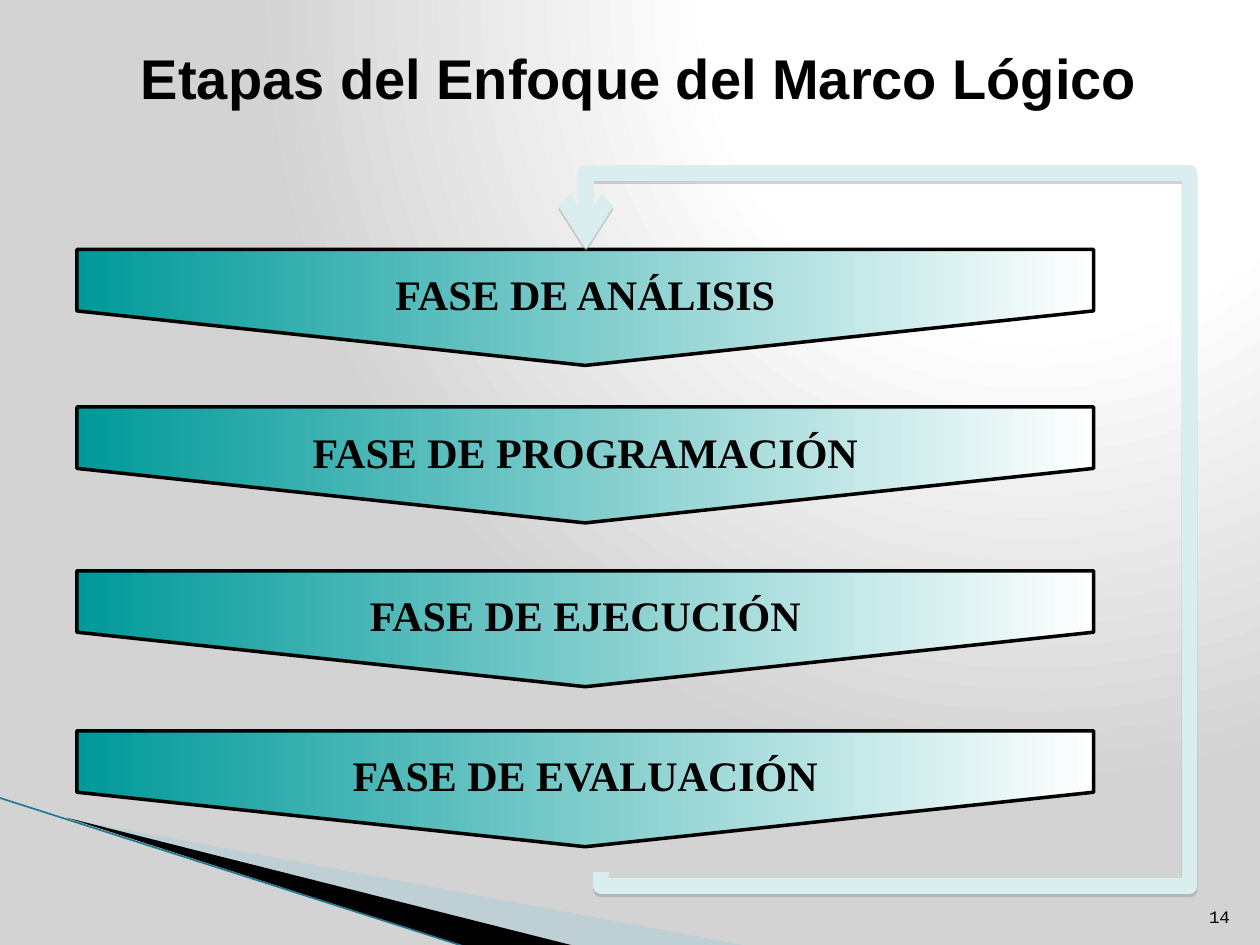
from lxml import etree
from pptx import Presentation
from pptx.dml.color import RGBColor
from pptx.enum.shapes import MSO_CONNECTOR, MSO_SHAPE
from pptx.enum.text import MSO_ANCHOR, PP_ALIGN
from pptx.oxml import parse_xml
from pptx.util import Inches, Pt

ELBOW, STRAIGHT = MSO_CONNECTOR.ELBOW, MSO_CONNECTOR.STRAIGHT
PENTAGON = MSO_SHAPE.PENTAGON
MIDDLE, BOTTOM = MSO_ANCHOR.MIDDLE, MSO_ANCHOR.BOTTOM
CENTER, RIGHT = PP_ALIGN.CENTER, PP_ALIGN.RIGHT
NS = "http://schemas.openxmlformats.org/drawingml/2006/main"
A = "{%s}" % NS

TEAL, WHITE, BLACK, PALE = "009999", "FFFFFF", "000000", "DAEDEF"
PHASE_LEFT, PHASE_WIDTH, PHASE_HEIGHT = 0.61, 8.07, 0.92
PHASES = [
    ("FASE DE ANÁLISIS", 1.98),
    ("FASE DE PROGRAMACIÓN", 3.23),
    ("FASE DE EJECUCIÓN", 4.53),
    ("FASE DE EVALUACIÓN", 5.80),
]


def rgb(color):
    return RGBColor.from_string(color)


def box(*lengths):
    return [Inches(length) for length in lengths]


def gradient(stops, direction):
    """Return a gradFill that keeps its direction when its shape is turned."""
    marks = "".join(
        f'<a:gs pos="{pos * 1000}"><a:srgbClr val="{color}"/></a:gs>'
        for pos, color in stops)
    return parse_xml(f'<a:gradFill xmlns:a="{NS}" rotWithShape="0">'
                     f'<a:gsLst>{marks}</a:gsLst>{direction}</a:gradFill>')


def replace_gradient(fill, parent, stops, direction):
    fill.gradient()
    old = parent.find(f".//{A}gradFill")
    old.getparent().replace(old, gradient(stops, direction))


def write(frame, text, font, size, bold, align, anchor):
    frame.text = text
    frame.vertical_anchor = anchor
    paragraph = frame.paragraphs[0]
    paragraph.alignment = align
    style = paragraph.runs[0].font
    style.name, style.size, style.bold = font, Pt(size), bold
    style.color.rgb = rgb(BLACK)


def style_line(connector, color, width):
    connector.line.color.rgb = rgb(color)
    connector.line.width = Pt(width)
    return etree.SubElement(connector._element.spPr, A + "effectLst")


def add_background(slide):
    replace_gradient(
        slide.background.fill, slide._element,
        [(0, WHITE), (40, WHITE), (100, "D3D3D3")],
        '<a:path path="circle"><a:fillToRect l="65000" b="98000"/></a:path>')


def add_wedge(slide, points, color, opacity=100):
    corners = [box(*point) for point in points]
    builder = slide.shapes.build_freeform(*corners[0])
    builder.add_line_segments(corners[1:], close=True)
    wedge = builder.convert_to_shape()
    wedge.shadow.inherit = False
    wedge.fill.solid()
    wedge.fill.fore_color.rgb = rgb(color)
    wedge.line.fill.background()
    if opacity < 100:
        tint = wedge._element.spPr.find(f"{A}solidFill/{A}srgbClr")
        etree.SubElement(tint, A + "alpha", val=str(opacity * 1000))


def add_corner(slide):
    add_wedge(slide, [(0.55, 6.5), (5.95, 7.51), (4.56, 7.51)], "A0CBDC", 40)
    add_wedge(slide, [(0.53, 6.49), (4.57, 7.51), (3.72, 7.52)], BLACK)
    edge = slide.shapes.add_connector(STRAIGHT, *box(-0.01, 6.33, 3.71, 7.52))
    style_line(edge, "1F7A92", 0.95)


def add_phase(slide, name, left, top, width, height):
    """Place a downward pentagon, a quarter turn of the right-pointing one."""
    middle_x, middle_y = left + width / 2, top + height / 2
    phase = slide.shapes.add_shape(
        PENTAGON, *box(middle_x - height / 2, middle_y - width / 2, height, width))
    phase.rotation = 90
    phase.adjustments[0] = 0.47
    phase.shadow.inherit = False
    replace_gradient(phase.fill, phase._element, [(0, TEAL), (100, WHITE)],
                     '<a:lin ang="0" scaled="1"/>')
    phase.line.color.rgb = rgb(BLACK)
    phase.line.width = Pt(2)
    write(phase.text_frame, name, "Times New Roman", 24, True, CENTER, MIDDLE)
    phase.text_frame.word_wrap = False
    phase.text_frame._txBody.bodyPr.set("vert", "vert270")


def add_feedback(slide, left, top, width, height):
    """Loop from below the last phase round the right side to the first one."""
    loop = slide.shapes.add_connector(
        ELBOW, *box(left, top, left + width, top + height))
    properties = loop._element.spPr
    frame = properties.find(A + "xfrm")
    frame.set("rot", str(270 * 60000))
    frame.set("flipV", "1")
    bends = properties.find(A + "prstGeom")
    bends.set("prst", "bentConnector5")
    guides = bends.find(A + "avLst")
    if guides is None:
        guides = etree.SubElement(bends, A + "avLst")
    for number, share in enumerate((-2300, -3890000, 112300), 1):
        etree.SubElement(guides, A + "gd", name=f"adj{number}", fmla=f"val {share}")
    effects = style_line(loop, PALE, 9)
    etree.SubElement(properties.find(A + "ln"), A + "tailEnd", type="arrow")
    shadow = etree.SubElement(
        effects, A + "outerShdw", dist=str(Pt(1.8)), dir=str(90 * 60000),
        rotWithShape="0")
    shade = etree.SubElement(shadow, A + "srgbClr", val="808080")
    etree.SubElement(shade, A + "alpha", val="35000")


def add_title(slide, *place):
    title = slide.shapes.title
    title.left, title.top, title.width, title.height = box(*place)
    write(title.text_frame, "Etapas del Enfoque del Marco Lógico",
          "Arial", 32, True, CENTER, MIDDLE)


def add_page_number(slide, *place):
    number = slide.shapes.add_textbox(*box(*place)).text_frame
    write(number, "14", "Courier New", 10, False, RIGHT, BOTTOM)
    number.word_wrap = True


def main():
    deck = Presentation()
    deck.slide_width, deck.slide_height = box(10, 7.5)
    slide = deck.slides.add_slide(deck.slide_layouts[5])
    add_background(slide)
    add_corner(slide)
    for name, top in PHASES:
        add_phase(slide, name, PHASE_LEFT, top, PHASE_WIDTH, PHASE_HEIGHT)
    add_title(slide, 0.43, 0.21, 9.29, 0.81)
    add_feedback(slide, 2.24, 4.39, 4.94, 0.12)
    add_page_number(slide, 9.46, 7.01, 0.4, 0.4)
    deck.save("out.pptx")


if __name__ == "__main__":
    main()
